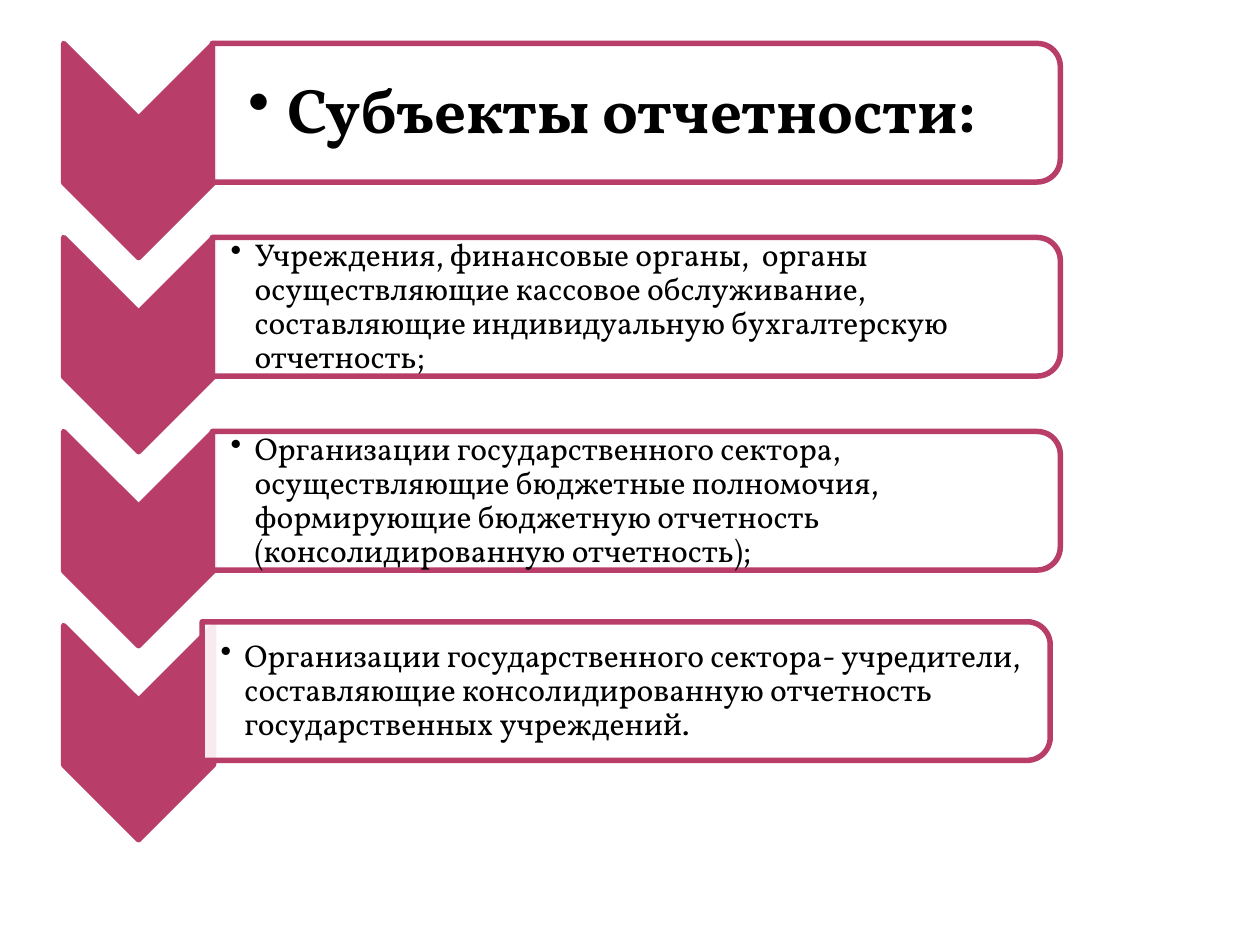
"""Build a slide listing reporting entities as a chevron list."""
from lxml import etree
from pptx import Presentation
from pptx.dml.color import RGBColor
from pptx.enum.shapes import MSO_SHAPE
from pptx.enum.text import MSO_ANCHOR, PP_ALIGN
from pptx.oxml.ns import qn
from pptx.util import Inches, Pt

CHEVRON, PANEL = MSO_SHAPE.CHEVRON, MSO_SHAPE.ROUND_2_SAME_RECTANGLE
MIDDLE, LEFT = MSO_ANCHOR.MIDDLE, PP_ALIGN.LEFT
BERRY = RGBColor(0xB8, 0x3D, 0x68)
WHITE = RGBColor(0xFF, 0xFF, 0xFF)
BLACK = RGBColor(0x00, 0x00, 0x00)
PITCH = 1.54

ITEMS = [
    ("Субъекты отчетности:", 36, True, 0.28, 0.03, 0.31, 0, 0),
    ("Учреждения, финансовые органы,  органы осуществляющие кассовое обслуживание, "
     "составляющие индивидуальную бухгалтерскую отчетность;",
     18, False, 0.14, 0.01, 0.19, 0, 0),
    ("Организации государственного сектора, осуществляющие бюджетные полномочия, "
     "формирующие бюджетную отчетность (консолидированную отчетность);",
     18, False, 0.14, 0.01, 0.19, 0, 0),
    ("Организации государственного сектора- учредители, составляющие "
     "консолидированную отчетность государственных учреждений.",
     18, False, 0.14, 0.01, 0.19, -0.08, -0.03),
]


def add_turned(s, kind, x, y, w, h, fill):
    sp = s.shapes.add_shape(kind, Inches(x), Inches(y), Inches(w), Inches(h))
    sp.rotation = 90
    sp.shadow.inherit = False
    sp.fill.solid()
    sp.fill.fore_color.rgb = fill
    sp.line.color.rgb = BERRY
    sp.line.width = Pt(3.15)
    return sp


prs = Presentation()
prs.slide_width, prs.slide_height = Inches(10), Inches(7.5)
s = prs.slides.add_slide(prs.slide_layouts[6])

for i, (text, size, bold, inset, margin, indent, dx, dy) in enumerate(ITEMS):
    y = PITCH * i
    add_turned(s, CHEVRON, 0.25, 0.6 + y, 1.7, 1.19, BERRY)

    panel = add_turned(s, PANEL, 4.5 + dx, -2.47 + y + dy, 1.1, 6.73, WHITE)
    color = panel.fill._xPr.find(qn("a:solidFill"))[0]
    etree.SubElement(color, qn("a:alpha"), val="90000")

    tb = s.shapes.add_textbox(Inches(1.69 + dx), Inches(0.4 + y + dy), Inches(6.68), Inches(0.99))
    tf = tb.text_frame
    tf.word_wrap = True
    tf.vertical_anchor = MIDDLE
    tf.margin_left = Inches(inset)
    tf.margin_right = tf.margin_top = tf.margin_bottom = Inches(margin)

    p = tf.paragraphs[0]
    pPr = p._p.get_or_add_pPr()
    pPr.set("marL", str(Inches(indent)))
    pPr.set("indent", str(-Inches(indent)))
    etree.SubElement(pPr, qn("a:buChar"), char="•")
    p.alignment = LEFT
    p.level = 1
    p.line_spacing = 0.9
    p.space_after = Pt(size * 0.15)

    r = p.add_run()
    r.text = text
    r.font.name = "Vollkorn"
    r.font.size = Pt(size)
    r.font.bold = bold
    r.font.color.rgb = BLACK

prs.save("out.pptx")
